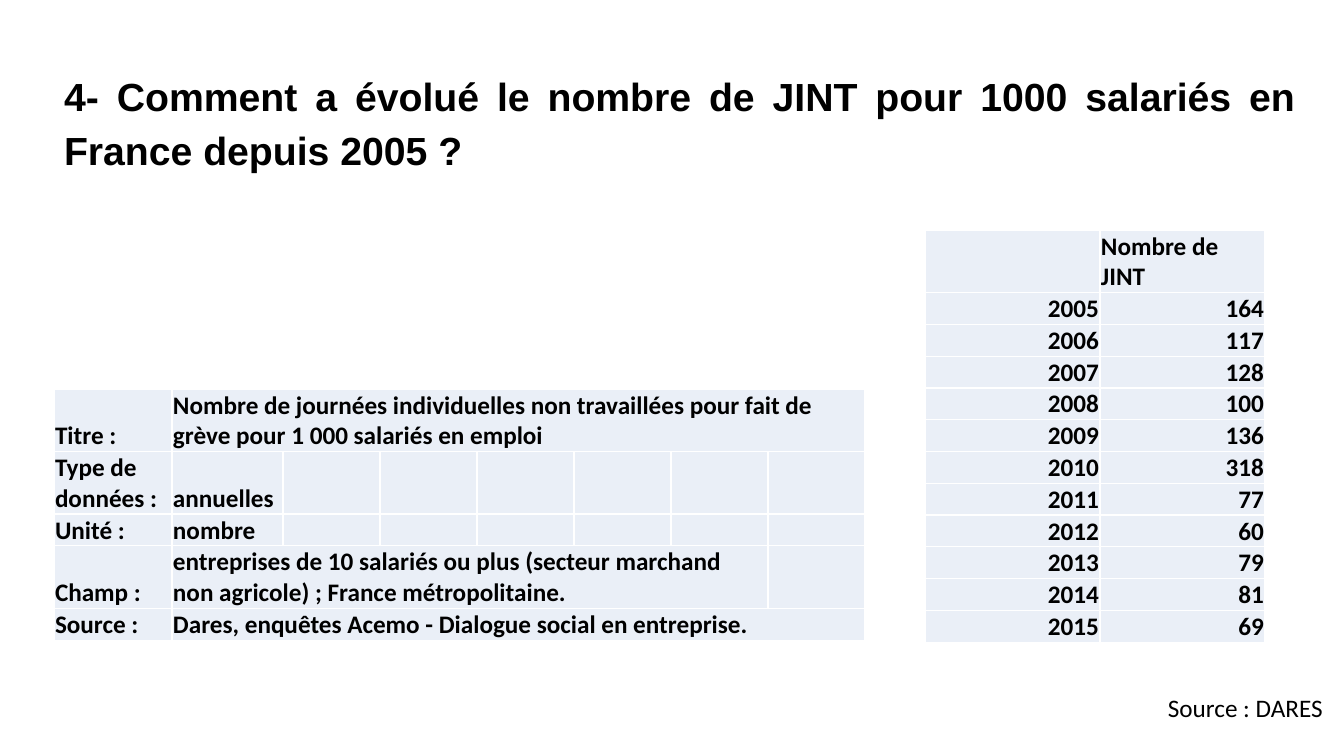
from dataclasses import dataclass

from lxml.etree import SubElement
from pptx import Presentation
from pptx.dml.color import RGBColor
from pptx.enum.text import MSO_ANCHOR, MSO_AUTO_SIZE, PP_ALIGN
from pptx.oxml.ns import qn
from pptx.util import Emu, Pt

EMU_PER_PX = 914400 / 100.8


@dataclass(frozen=True)
class Theme:
    ink: str = "000000"
    cell_fill: str = "EAEFF7"
    border: str = "FFFFFF"
    title_font: str = "Arial"
    body_font: str = "Calibri"
    title_size: int = 28
    body_size: int = 18


THEME = Theme()

TITLE = "4- Comment a évolué le nombre de JINT pour 1000 salariés en France depuis 2005 ?"
JINT_BY_YEAR = {
    2005: 164, 2006: 117, 2007: 128, 2008: 100, 2009: 136, 2010: 318,
    2011: 77, 2012: 60, 2013: 79, 2014: 81, 2015: 69,
}
# Label, description, number of columns the description spans, row height
SURVEY_DETAILS = [
    ("Titre :", "Nombre de journées individuelles non travaillées pour fait de "
     "grève pour 1 000 salariés en emploi", 7, 61),
    ("Type de données :", "annuelles", 1, 61),
    ("Unité :", "nombre", 1, 31),
    ("Champ :", "entreprises de 10 salariés ou plus (secteur marchand "
     "non agricole) ; France métropolitaine.", 6, 61),
    ("Source :", "Dares, enquêtes Acemo - Dialogue social en entreprise.", 7, 31),
]


def px(length):
    return Emu(round(length * EMU_PER_PX))


def write_text(text_frame, text, *, font=THEME.body_font, size=THEME.body_size,
               bold=False, align=PP_ALIGN.LEFT, line_spacing=None):
    paragraph = text_frame.paragraphs[0]
    paragraph.alignment = align
    if line_spacing:
        paragraph.line_spacing = line_spacing
    run = paragraph.add_run()
    run.text = text
    run.font.name = font
    run.font.size = Pt(size)
    run.font.bold = bold
    run.font.color.rgb = RGBColor.from_string(THEME.ink)


def style_cell(cell):
    """Set narrow margins, white borders and the pale fill."""
    cell.margin_left = cell.margin_right = cell.margin_top = px(1)
    cell.margin_bottom = 0
    cell.vertical_anchor = MSO_ANCHOR.BOTTOM
    properties = cell._tc.get_or_add_tcPr()
    for side in ("lnL", "lnR", "lnT", "lnB"):
        line = SubElement(properties, qn(f"a:{side}"), w=str(Pt(1)))
        line_fill = SubElement(line, qn("a:solidFill"))
        SubElement(line_fill, qn("a:srgbClr"), val=THEME.border)
    cell.fill.solid()
    cell.fill.fore_color.rgb = RGBColor.from_string(THEME.cell_fill)


def add_plain_table(slide, left, top, column_widths, row_heights):
    frame = slide.shapes.add_table(
        len(row_heights), len(column_widths), px(left), px(top),
        px(sum(column_widths)), px(sum(row_heights)))
    table = frame.table
    table.first_row = table.horz_banding = False
    for column, width in zip(table.columns, column_widths):
        column.width = px(width)
    for row, height in zip(table.rows, row_heights):
        row.height = px(height)
    for cell in table.iter_cells():
        style_cell(cell)
    return table


def add_title(slide):
    title = slide.shapes.title
    title.left, title.top, title.width, title.height = map(px, (54, 60, 1251, 115))
    title.text_frame.word_wrap = True
    title.text_frame.auto_size = MSO_AUTO_SIZE.NONE
    title.text_frame.vertical_anchor = MSO_ANCHOR.TOP
    write_text(title.text_frame, TITLE, font=THEME.title_font, size=THEME.title_size,
               bold=True, align=PP_ALIGN.JUSTIFY, line_spacing=1.15)


def add_jint_table(slide):
    table = add_plain_table(slide, 925, 230, [175, 165], [61] + [31] * len(JINT_BY_YEAR))
    write_text(table.cell(0, 1).text_frame, "Nombre de JINT", bold=True)
    for row, record in enumerate(JINT_BY_YEAR.items(), start=1):
        for column, number in enumerate(record):
            write_text(table.cell(row, column).text_frame, str(number),
                       bold=True, align=PP_ALIGN.RIGHT)


def add_survey_table(slide):
    heights = [height for *_, height in SURVEY_DETAILS]
    table = add_plain_table(slide, 54, 389, [118, 111] + [97] * 6, heights)
    for row, (label, description, span, _) in enumerate(SURVEY_DETAILS):
        write_text(table.cell(row, 0).text_frame, label, bold=True)
        cell = table.cell(row, 1)
        if span > 1:
            cell.merge(table.cell(row, span))
        write_text(cell.text_frame, description, bold=True)


def add_source(slide):
    box = slide.shapes.add_textbox(px(1158), px(687), px(186), px(40))
    box.text_frame.word_wrap = True
    write_text(box.text_frame, "Source : DARES")


def main():
    presentation = Presentation()
    presentation.slide_width, presentation.slide_height = px(1344), px(756)
    slide = presentation.slides.add_slide(presentation.slide_layouts[5])
    add_jint_table(slide)
    add_survey_table(slide)
    add_title(slide)
    add_source(slide)
    presentation.save("out.pptx")


if __name__ == "__main__":
    main()
